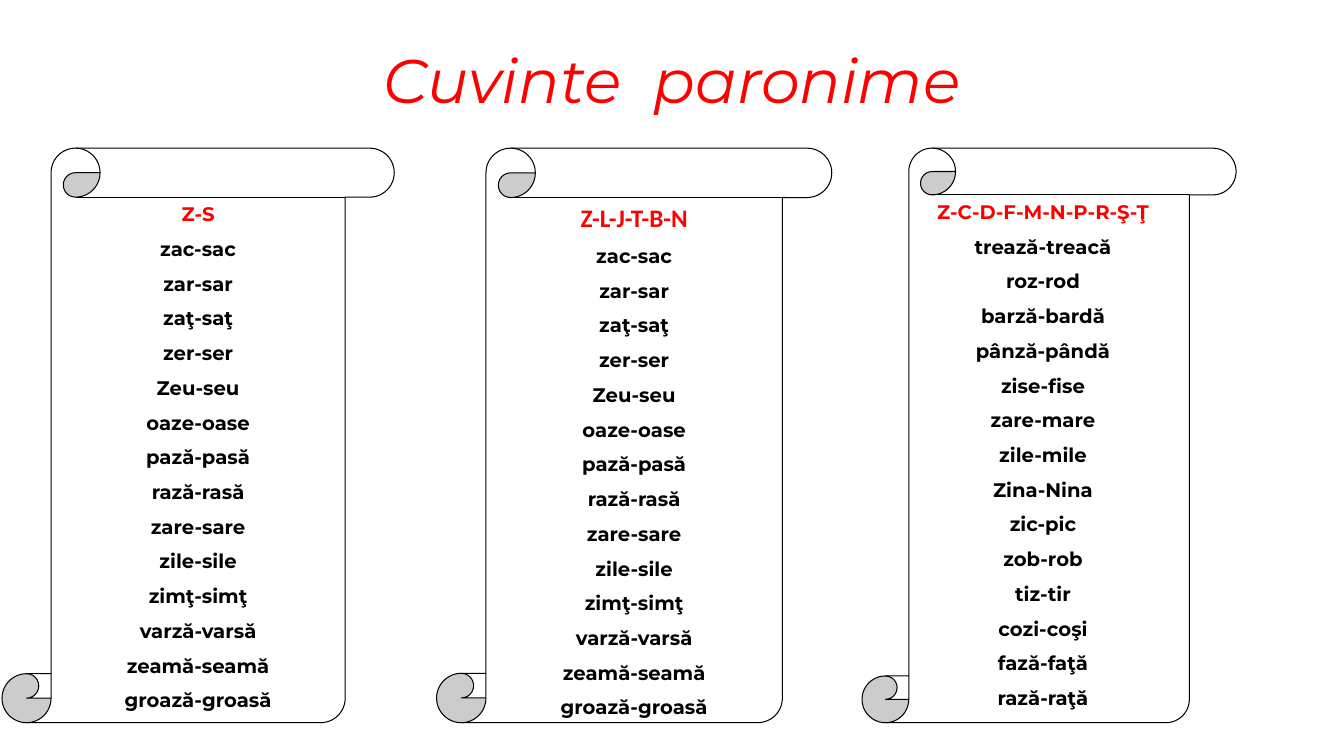
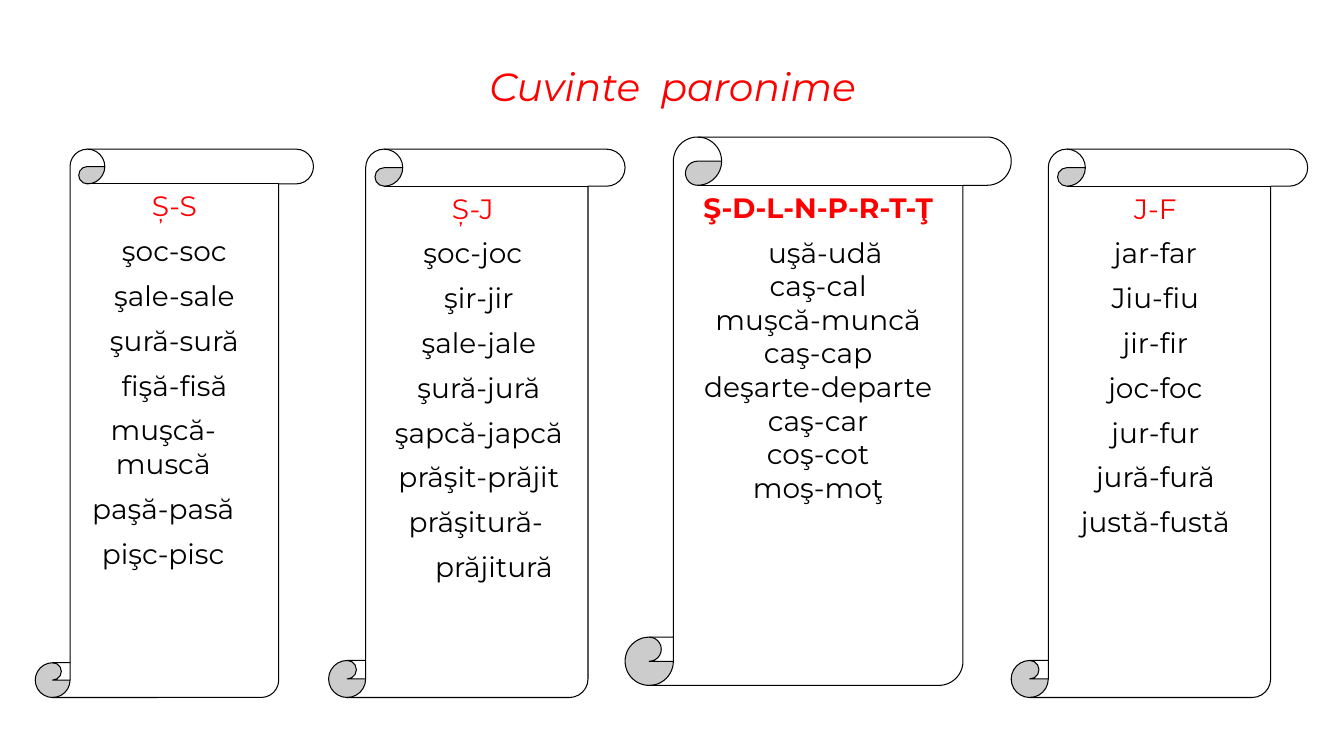
from pptx import Presentation
from pptx.dml.color import RGBColor
from pptx.enum.shapes import MSO_SHAPE
from pptx.enum.text import MSO_ANCHOR, PP_ALIGN
from pptx.util import Inches, Pt

RED, BLACK, WHITE = "FF0000", "000000", "FFFFFF"


def color(value):
    return RGBColor.from_string(value)


def write(paragraph, text, size, ink=BLACK, font="Montserrat", bold=False,
          italic=False, after=0, spacing=1.0, shift=0):
    """Write one centred line; shift moves its centre sideways in inches."""
    paragraph.alignment = PP_ALIGN.CENTER
    paragraph.space_after = Pt(after)
    paragraph.line_spacing = spacing
    if shift:
        side = "marL" if shift > 0 else "marR"
        paragraph._p.get_or_add_pPr().set(side, str(Inches(2 * abs(shift))))
    run = paragraph.add_run()
    run.text = text
    run.font.name = font
    run.font.size = Pt(size)
    run.font.bold = bold
    run.font.italic = italic
    run.font.color.rgb = color(ink)


class ParonymDeck:
    """Holds the presentation, its scroll style and the current slide."""

    def __init__(self):
        self.deck = Presentation()
        self.deck.slide_width = Inches(13.33)
        self.deck.slide_height = Inches(7.5)

    def add_slide(self, title_size, title_height):
        self.slide = self.deck.slides.add_slide(self.deck.slide_layouts[6])
        title = self.slide.shapes.add_textbox(
            Inches(0.92), Inches(0.4), Inches(11.5), Inches(title_height))
        frame = title.text_frame
        frame.word_wrap = True
        frame.vertical_anchor = MSO_ANCHOR.MIDDLE
        write(frame.paragraphs[0], "Cuvinte  paronime", title_size,
              ink=RED, italic=True, spacing=0.9)

    def add_scroll(self, left, top, width, height, heading, pairs, size,
                   bold=False, after=8, shifts=None, tight=(), heading_format=None):
        scroll = self.slide.shapes.add_shape(
            MSO_SHAPE.VERTICAL_SCROLL,
            Inches(left), Inches(top), Inches(width), Inches(height))
        scroll.shadow.inherit = False
        scroll.fill.solid()
        scroll.fill.fore_color.rgb = color(WHITE)
        scroll.line.color.rgb = color(BLACK)
        scroll.line.width = Pt(0.75)
        frame = scroll.text_frame
        frame.word_wrap = True
        frame.vertical_anchor = MSO_ANCHOR.TOP
        shifts = shifts or {}
        heading_style = {"size": size, "bold": bold, "ink": RED, "after": 8,
                         "shift": shifts.get(heading, 0), **(heading_format or {})}
        write(frame.paragraphs[0], heading, **heading_style)
        for pair in pairs:
            write(frame.add_paragraph(), pair, size, bold=bold,
                  after=0 if pair in tight else after, shift=shifts.get(pair, 0))


def build_z_slide(deck):
    z_s_pairs = ("zac-sac zar-sar zaţ-saţ zer-ser Zeu-seu oaze-oase pază-pasă "
                 "rază-rasă zare-sare zile-sile zimţ-simţ varză-varsă "
                 "zeamă-seamă groază-groasă").split()
    mixed_pairs = ("trează-treacă roz-rod barză-bardă pânză-pândă zise-fise "
                   "zare-mare zile-mile Zina-Nina zic-pic zob-rob tiz-tir "
                   "cozi-coşi fază-faţă rază-raţă").split()
    mixed_heading = "Z-C-D-F-M-N-P-R-Ş-Ţ"
    style = {"size": 14, "bold": True}
    deck.add_slide(44, 0.86)
    deck.add_scroll(0.02, 1.47, 3.89, 5.7, "Z-S", z_s_pairs, **style)
    deck.add_scroll(4.33, 1.47, 3.92, 5.7, "Z-L-J-T-B-N", z_s_pairs, **style,
                    heading_format={"size": 18, "font": "Calibri"})
    deck.add_scroll(8.55, 1.47, 3.71, 5.7, mixed_heading, mixed_pairs, **style,
                    shifts={mixed_heading: -0.06})


def build_s_slide(deck):
    s_s_pairs = ("şoc-soc şale-sale şură-sură fişă-fisă muşcă- muscă "
                 "paşă-pasă pişc-pisc").split()
    s_j_pairs = ("şoc-joc şir-jir şale-jale şură-jură şapcă-japcă "
                 "prăşit-prăjit prăşitură- prăjitură").split()
    mixed_pairs = ("uşă-udă caş-cal muşcă-muncă caş-cap deşarte-departe "
                   "caş-car coş-cot moş-moţ").split()
    j_f_pairs = "jar-far Jiu-fiu jir-fir joc-foc jur-fur jură-fură justă-fustă".split()
    s_j_shifts = {pair: 0.06 for pair in s_j_pairs[1:6]}
    s_j_shifts.update({"Ș-J": -0.04, "prăşitură-": 0.03, "prăjitură": 0.21})
    deck.add_slide(28, 0.96)
    deck.add_scroll(0.35, 1.48, 2.76, 5.44, "Ș-S", s_s_pairs, 20,
                    shifts={"muşcă-": -0.11}, tight=("muşcă-",))
    deck.add_scroll(3.26, 1.48, 2.94, 5.44, "Ș-J", s_j_pairs, 20, shifts=s_j_shifts)
    deck.add_scroll(6.2, 1.36, 3.83, 5.44, "Ş-D-L-N-P-R-T-Ţ", mixed_pairs, 20,
                    after=0, shifts={"uşă-udă": 0.07}, heading_format={"bold": True})
    deck.add_scroll(10.03, 1.48, 2.94, 5.44, "J-F", j_f_pairs, 20,
                    shifts={"J-F": -0.04})


def main():
    paronyms = ParonymDeck()
    build_z_slide(paronyms)
    build_s_slide(paronyms)
    paronyms.deck.save("out.pptx")


if __name__ == "__main__":
    main()
